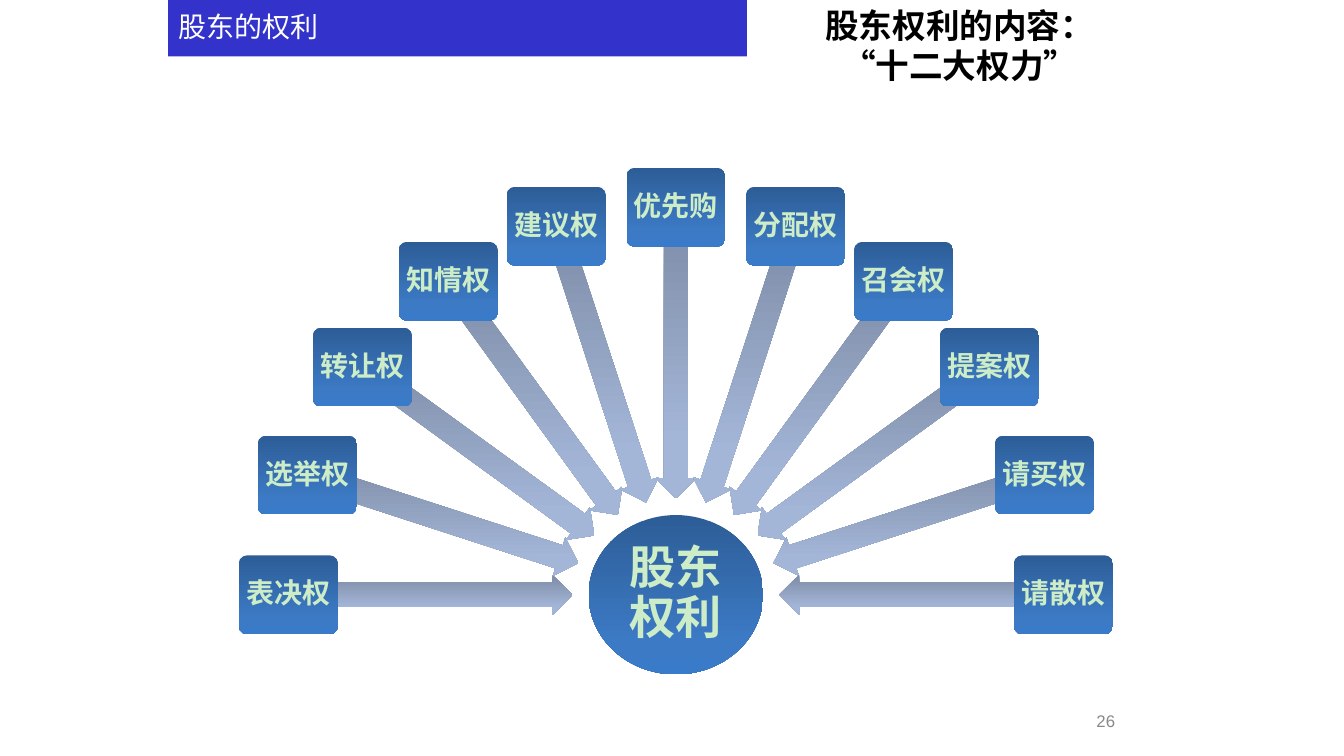
"""Build the slide on the twelve rights of shareholders."""
import math

import pptx
import pptx.dml.color
import pptx.enum.shapes
import pptx.enum.text
import pptx.oxml
import pptx.oxml.ns
import pptx.util

Pt = pptx.util.Pt
SHAPE = pptx.enum.shapes.MSO_SHAPE
ALIGN = pptx.enum.text.PP_ALIGN
ANCHOR = pptx.enum.text.MSO_ANCHOR

COLORS = {
    "title_bar": "3333CC",
    "title_text": "FFFFFF",
    "heading": "000000",
    "page_number": "898989",
    "label": "CCEDC7",
}
GRADIENTS = {
    "node": [(0, "2D5D97"), (80, "3C7AC5"), (100, "397BC9")],
    "arrow": [(0, "7C8BA5"), (80, "A4B6D8"), (100, "A3B6DB")],
}
CJK_FONT = "Noto Sans CJK SC"
RIGHTS = ["表决权", "选举权", "转让权", "知情权", "建议权", "优先购",
          "分配权", "召会权", "提案权", "请买权", "请散权"]
CENTER_X, CENTER_Y = 482.8, 424.8
NODE_RADIUS = 276.8


class SlideBuilder:
    """Holds the current slide and draws its elements in one style."""

    def __init__(self, slide):
        self.slide = slide

    def set_text(self, shape, lines, size, color, font=CJK_FONT, bold=False,
                 align=ALIGN.CENTER, anchor=ANCHOR.MIDDLE, inset=None,
                 spacing=None, after=None, wrap=True):
        frame = shape.text_frame
        frame.word_wrap = wrap
        frame.vertical_anchor = anchor
        if inset is not None:
            frame.margin_left = frame.margin_right = Pt(inset)
            frame.margin_top = frame.margin_bottom = Pt(inset)
        frame.text = "\n".join(lines)
        for paragraph in frame.paragraphs:
            paragraph.alignment = align
            paragraph.line_spacing = spacing
            paragraph.space_after = after
            paragraph.font.size = Pt(size)
            paragraph.font.bold = bold
            paragraph.font.name = font
            paragraph.font.color.rgb = pptx.dml.color.RGBColor.from_string(COLORS[color])
            latin = paragraph.font._element.find(pptx.oxml.ns.qn("a:latin"))
            latin.addnext(pptx.oxml.parse_xml(
                f'<a:ea {pptx.oxml.ns.nsdecls("a")} typeface="{CJK_FONT}"/>'))

    def text_box(self, box, lines, size, color, **style):
        shape = self.slide.shapes.add_textbox(*map(Pt, box))
        self.set_text(shape, lines, size, color, **style)
        return shape

    def solid_bar(self, box, color):
        shape = self.slide.shapes.add_shape(SHAPE.RECTANGLE, *map(Pt, box))
        shape.shadow.inherit = False
        shape.fill.solid()
        shape.fill.fore_color.rgb = pptx.dml.color.RGBColor.from_string(COLORS[color])
        shape.line.fill.background()
        return shape

    def gradient_shape(self, kind, center_x, center_y, width, height, gradient,
                       adjustments=(), rotation=0):
        shape = self.slide.shapes.add_shape(
            kind, Pt(center_x - width / 2), Pt(center_y - height / 2),
            Pt(width), Pt(height))
        for index, value in enumerate(adjustments):
            shape.adjustments[index] = value
        shape.rotation = rotation
        stops = "".join(
            f'<a:gs pos="{position * 1000}"><a:srgbClr val="{color}"/></a:gs>'
            for position, color in GRADIENTS[gradient])
        shape._element.spPr.append(pptx.oxml.parse_xml(
            f'<a:gradFill {pptx.oxml.ns.nsdecls("a")} rotWithShape="0">'
            f'<a:gsLst>{stops}</a:gsLst><a:lin ang="5400000" scaled="0"/></a:gradFill>'))
        shape.line.fill.background()
        shape.shadow.inherit = False
        return shape

    def hub(self, label):
        shape = self.gradient_shape(SHAPE.OVAL, CENTER_X, CENTER_Y, 124.6, 113.8, "node")
        self.set_text(shape, [label], 33, "label", bold=True, inset=1.5,
                      spacing=0.9, after=Pt(11.5))

    def right(self, label, degrees):
        cosine = math.cos(math.radians(degrees))
        sine = math.sin(math.radians(degrees))
        stretch = sine ** 2
        distance = 175.3 - 2.5 * stretch
        self.gradient_shape(
            SHAPE.LEFT_ARROW, CENTER_X - distance * cosine, CENTER_Y - distance * sine,
            203 + 5 * stretch, 28.8, "arrow", (0.6, 0.5), (180 + degrees) % 360)
        node = self.gradient_shape(
            SHAPE.ROUNDED_RECTANGLE, CENTER_X - NODE_RADIUS * cosine,
            CENTER_Y - NODE_RADIUS * sine, 70.6, 56.2, "node", (0.1,))
        self.set_text(node, [label], 20, "label", bold=True, inset=3,
                      spacing=0.9, after=Pt(7))


def main():
    presentation = pptx.Presentation()
    presentation.slide_width = Pt(960)
    presentation.slide_height = Pt(540)
    builder = SlideBuilder(presentation.slides.add_slide(presentation.slide_layouts[6]))

    builder.text_box((635.8, 500.4, 167.8, 28.8), ["26"], 12, "page_number",
                     font="Arial", align=ALIGN.RIGHT)
    builder.hub("股东权利")
    step = 180 / (len(RIGHTS) - 1)
    for index, label in enumerate(RIGHTS):
        builder.right(label, index * step)

    heading = builder.text_box(
        (581.8, 0, 207.4, 64.8), ["股东权利的内容：", "“十二大权力”"], 24, "heading",
        font="Arial", bold=True, anchor=ANCHOR.TOP, wrap=False)
    heading.text_frame.auto_size = pptx.enum.text.MSO_AUTO_SIZE.SHAPE_TO_FIT_TEXT
    title = builder.solid_bar((120.2, 0, 413.3, 40.3), "title_bar")
    builder.set_text(title, ["股东的权利"], 20, "title_text", font="Calibri",
                     align=ALIGN.LEFT, spacing=0.9)
    presentation.save("out.pptx")


if __name__ == "__main__":
    main()
